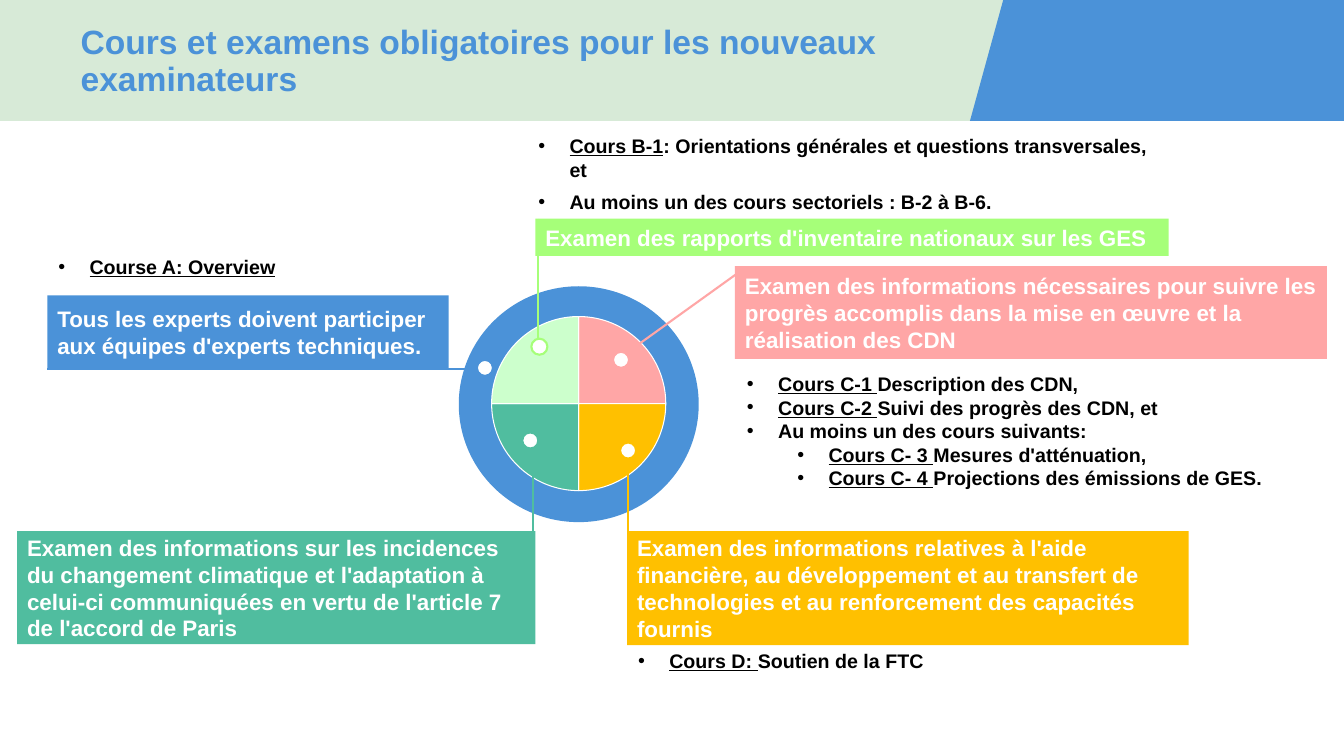
"""Build the slide on required courses and exams for new reviewers."""
from lxml.etree import SubElement
from pptx import Presentation
from pptx.chart.data import CategoryChartData
from pptx.dml.color import RGBColor
from pptx.enum.chart import XL_CHART_TYPE
from pptx.enum.shapes import MSO_CONNECTOR, MSO_SHAPE
from pptx.enum.text import MSO_ANCHOR, PP_ALIGN
from pptx.oxml import parse_xml
from pptx.oxml.ns import nsdecls, qn
from pptx.util import Inches, Pt

BLUE = RGBColor(0x4B, 0x92, 0xD8)
MINT = RGBColor(0xD7, 0xEA, 0xD7)
LIME = RGBColor(0xA6, 0xFF, 0x79)
PALE = RGBColor(0xCC, 0xFF, 0xCC)
PINK = RGBColor(0xFF, 0xA6, 0xA6)
GOLD = RGBColor(0xFF, 0xC0, 0x00)
TEAL = RGBColor(0x50, 0xBD, 0x9F)
WHITE = RGBColor(0xFF, 0xFF, 0xFF)
BLACK = RGBColor(0, 0, 0)

HEAD = {"name": "Arial", "size": Pt(24), "bold": True}
LABEL = {"name": "Arial", "size": Pt(16), "bold": True}
NOTE = {"name": "Arial", "size": Pt(14), "bold": True}
DOT = 0.16

TOPICS = [
    dict(box=(0.47, 2.93, 3.98, 0.72), color=BLUE,
         text="Tous les experts doivent participer aux équipes d'experts techniques.",
         line=(0, 0.73, 4.26, 0.73), dot=(4.26, 0.64),
         note=(0.01, -0.45, 2.73, 0.34), gap=6,
         items=[(0, "Course A: Overview", "")]),
    dict(box=(5.31, 2.17, 6.28, 0.37), color=LIME,
         text="Examen des rapports d'inventaire nationaux sur les GES",
         line=(0.03, 0, 0.03, 1.21), dot=(-0.04, 1.19),
         note=(-0.07, -0.89, 6.28, 0.89), gap=6,
         items=[(0, "Cours B-1", ": Orientations générales et questions transversales, et"),
                (0, "", "Au moins un des cours sectoriels : B-2 à B-6.")]),
    dict(box=(7.29, 2.64, 5.87, 0.92), color=PINK,
         text="Examen des informations nécessaires pour suivre les progrès "
              "accomplis dans la mise en œuvre et la réalisation des CDN",
         line=(-1.17, 0.93, 0.04, 0.06), dot=(-1.21, 0.85),
         note=(0.02, 1, 5.83, 1.28),
         items=[(0, "Cours C-1 ", "Description des CDN,"),
                (0, "Cours C-2 ", "Suivi des progrès des CDN, et"),
                (0, "", "Au moins un des cours suivants:"),
                (1, "Cours C- 3 ", "Mesures d'atténuation,"),
                (1, "Cours C- 4 ", "Projections des émissions de GES.")]),
    dict(box=(6.22, 5.27, 5.57, 1.13), color=GOLD,
         text="Examen des informations relatives à l'aide financière, au "
              "développement et au transfert de technologies et au "
              "renforcement des capacités fournis",
         line=(0.01, 0.88, 0.01, -0.88), dot=(-0.07, -0.88),
         note=(0.01, 1.12, 3.11, 0.34),
         items=[(0, "Cours D: ", "Soutien de la FTC")]),
    dict(box=(0.17, 5.27, 5.14, 1.12), color=TEAL,
         text="Examen des informations sur les incidences du changement "
              "climatique et l'adaptation à celui-ci communiquées en vertu de "
              "l'article 7 de l'accord de Paris",
         line=(5.12, 0.79, 5.12, -0.97), dot=(5.01, -0.98)),
]


def style(font, look, color):
    """Apply a dict of format values and a colour to a font."""
    for key, value in look.items():
        setattr(font, key, value)
    font.color.rgb = color


def paint(shape, fill, line=None):
    """Give a shape a flat fill, and a line if a colour is passed."""
    shape.shadow.inherit = False
    shape.fill.solid()
    shape.fill.fore_color.rgb = fill
    if line is None:
        shape.line.fill.background()
    else:
        shape.line.color.rgb = line
        shape.line.width = Pt(1.5)


def add_form(slide, kind, box, fill, line=None):
    """Add a painted preset shape."""
    shape = slide.shapes.add_shape(kind, *map(Inches, box))
    paint(shape, fill, line)
    return shape


def add_head(slide, box):
    """Draw the title band with its slanted end."""
    left, top, width, height = box
    add_form(slide, MSO_SHAPE.RECTANGLE, box, MINT)
    right, base = left + width, top + height
    edge = [(right - 3.38, top), (right, top), (right, base), (right - 3.71, base)]
    points = [(Inches(x), Inches(y)) for x, y in edge]
    pen = slide.shapes.build_freeform(*points[0])
    pen.add_line_segments(points[1:], close=True)
    paint(pen.convert_to_shape(), BLUE)
    title = slide.shapes.add_textbox(
        Inches(left + 0.8), Inches(top + 0.31), Inches(8.93), Inches(0.61))
    frame = title.text_frame
    for side in ("left", "top", "right", "bottom"):
        setattr(frame, f"margin_{side}", 0)
    frame.word_wrap = True
    frame.vertical_anchor = MSO_ANCHOR.MIDDLE
    para = frame.paragraphs[0]
    para.line_spacing = 0.9
    para.text = "Cours et examens obligatoires pour les nouveaux examinateurs"
    style(para.runs[0].font, HEAD, BLUE)


def add_wheel(slide, box):
    """Draw the blue ring and the pie of four equal parts inside it."""
    left, top, width, height = box
    add_form(slide, MSO_SHAPE.OVAL, box, BLUE)
    data = CategoryChartData()
    data.categories = ["1", "2", "3", "4"]
    data.add_series("Series 1", [25] * 4)
    chart = slide.shapes.add_chart(
        XL_CHART_TYPE.PIE, Inches(left - 0.16), Inches(top + 0.16),
        Inches(2.7), Inches(2.01), data).chart
    chart.has_legend = chart.has_title = False
    style(chart.font, {"name": "Calibri", "size": Pt(10)}, BLACK)
    plot = chart.plots[0]
    plot.vary_by_categories = True
    for index, color in enumerate((PINK, GOLD, TEAL, PALE)):
        part = plot.series[0].points[index].format
        part.fill.solid()
        part.fill.fore_color.rgb = color
        part.line.color.rgb = WHITE
        part.line.width = Pt(0.75)
    area = chart.element.find(".//" + qn("c:plotArea"))
    for old in area.findall(qn("c:layout")):
        area.remove(old)
    rules = {"layoutTarget": "inner", "xMode": "edge", "yMode": "edge",
             "x": 0.18, "y": 0.07, "w": 0.64, "h": 0.86}
    layout = parse_xml(f"<c:layout {nsdecls('c')}><c:manualLayout/></c:layout>")
    for key, value in rules.items():
        SubElement(layout[0], qn("c:" + key)).set("val", str(value))
    area.insert(0, layout)


def add_note(slide, box, items, gap):
    """Write a bulleted list whose lead words are underlined."""
    frame = slide.shapes.add_textbox(*map(Inches, box)).text_frame
    frame.word_wrap = True
    for index, (level, lead, rest) in enumerate(items):
        para = frame.add_paragraph() if index else frame.paragraphs[0]
        props = para._p.get_or_add_pPr()
        props.set("marL", str(Inches(0.31 + level * 0.5)))
        props.set("indent", str(Inches(-0.31)))
        SubElement(props, qn("a:buFont")).set("typeface", "Arial")
        SubElement(props, qn("a:buChar")).set("char", "•")
        para.level = level
        if index:
            para.space_before = Pt(gap)
        for text, under in ((lead, True), (rest, False)):
            if text:
                run = para.add_run()
                run.text = text
                style(run.font, {**NOTE, "underline": under}, BLACK)


def add_topic(slide, box, color, text, line, dot, note=None, items=(), gap=0):
    """Place a label with its leader line, dot and course list."""
    left, top, width, height = box
    ends = [Inches(n + base) for n, base in zip(line, (left, top) * 2)]
    link = slide.shapes.add_connector(MSO_CONNECTOR.STRAIGHT, *ends)
    link.line.color.rgb = color
    link.line.width = Pt(1.5)
    SubElement(link._element.spPr, qn("a:effectLst"))
    spot = (left + dot[0], top + dot[1], DOT, DOT)
    add_form(slide, MSO_SHAPE.OVAL, spot, WHITE, color)
    frame = add_form(slide, MSO_SHAPE.RECTANGLE, box, color).text_frame
    frame.word_wrap = True
    frame.vertical_anchor = MSO_ANCHOR.MIDDLE
    para = frame.paragraphs[0]
    para.alignment = PP_ALIGN.LEFT
    para.text = text
    style(para.runs[0].font, LABEL, WHITE)
    if note:
        place = (left + note[0], top + note[1], *note[2:])
        add_note(slide, place, items, gap)


def main():
    """Build and save the slide."""
    deck = Presentation()
    deck.slide_width, deck.slide_height = Inches(13.33), Inches(7.5)
    slide = deck.slides.add_slide(deck.slide_layouts[6])
    add_head(slide, (0, 0, 13.33, 1.2))
    add_wheel(slide, (4.55, 2.84, 2.38, 2.34))
    for topic in TOPICS:
        add_topic(slide, **topic)
    deck.save("out.pptx")


if __name__ == "__main__":
    main()
